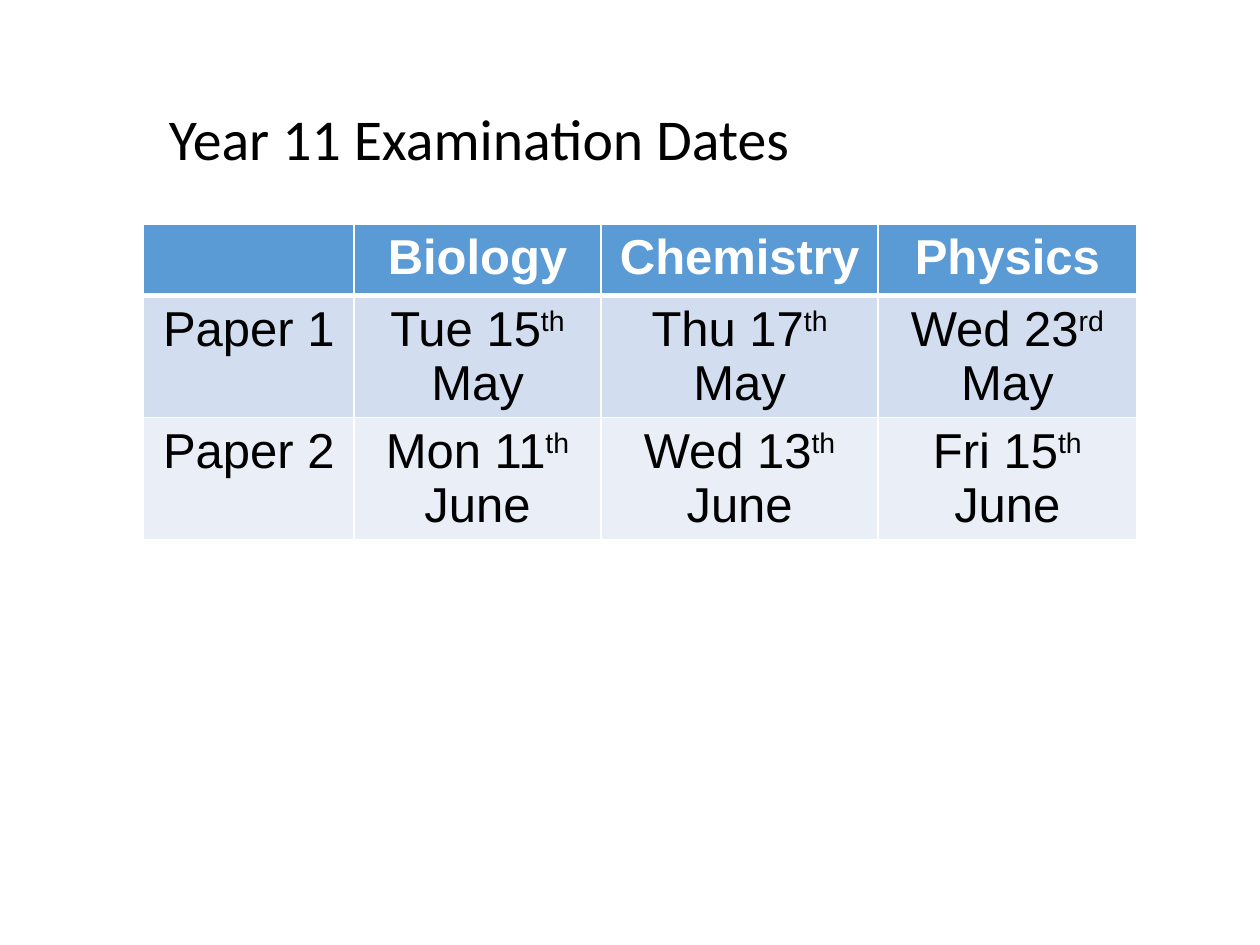
from lxml.etree import SubElement
from pptx import Presentation
from pptx.dml.color import RGBColor
from pptx.enum.text import MSO_ANCHOR, PP_ALIGN
from pptx.oxml.ns import qn
from pptx.util import Inches, Pt


def tint(code):
    return RGBColor.from_string(code)


def style(font, form):
    for key, value in form.items():
        if key == "color":
            font.color.rgb = tint(value)
        else:
            setattr(font, key, value)


deck = Presentation()
deck.slide_width, deck.slide_height = Inches(10), Inches(7.5)
wide, high = deck.slide_width, deck.slide_height
slide = deck.slides.add_slide(deck.slide_layouts[5])
left = int(wide * 0.114)

title = slide.shapes.title
place = {"left": left, "top": int(high * 0.07),
         "width": int(wide * 0.9), "height": int(high * 0.16)}
for key, value in place.items():
    setattr(title, key, value)
frame = title.text_frame
frame.text = "Year 11 Examination Dates"
frame.word_wrap = True
frame.margin_left = int(wide * 0.02)
frame.vertical_anchor = MSO_ANCHOR.MIDDLE
line = frame.paragraphs[0]
line.alignment = PP_ALIGN.LEFT
line.line_spacing = 0.9
style(line.runs[0].font, {"name": "Calibri", "size": Pt(33), "color": "000000"})

rows = [
    [[""], ["Biology"], ["Chemistry"], ["Physics"]],
    [["Paper 1"], ["Tue 15", "th", " May"], ["Thu 17", "th", " May"], ["Wed 23", "rd", " May"]],
    [["Paper 2"], ["Mon 11", "th", " June"], ["Wed 13", "th", " June"], ["Fri 15", "th", " June"]],
]
cols = [0.167, 0.196, 0.22, 0.205]
tall = [0.076, 0.129, 0.129]
fills = ["5B9BD5", "D2DEEF", "EAEFF7"]
base = {"name": "Arial", "size": Pt(28)}
looks = [{"bold": True, "color": "FFFFFF"}] + [{"bold": False, "color": "000000"}] * 2

table = slide.shapes.add_table(
    len(rows), len(cols), left, int(high * 0.237),
    int(wide * sum(cols)), int(high * sum(tall))).table
for col, share in zip(table.columns, cols):
    col.width = int(wide * share)
for row, share in zip(table.rows, tall):
    row.height = int(high * share)

for r, row in enumerate(rows):
    for c, parts in enumerate(row):
        cell = table.cell(r, c)
        props = cell._tc.get_or_add_tcPr()
        for side in "LRTB":
            thick = 3 if (r, side) in [(0, "B"), (1, "T")] else 1
            edge = SubElement(props, qn("a:ln" + side), w=str(Pt(thick)))
            paint = SubElement(edge, qn("a:solidFill"))
            SubElement(paint, qn("a:srgbClr"), val="FFFFFF")
        cell.fill.solid()
        cell.fill.fore_color.rgb = tint(fills[r])
        line = cell.text_frame.paragraphs[0]
        line.alignment = PP_ALIGN.CENTER
        for n, part in enumerate(parts):
            if part:
                run = line.add_run()
                run.text = part
                style(run.font, base | looks[r])
                if n == 1:
                    run._r.get_or_add_rPr().set("baseline", "30000")

deck.save("out.pptx")
